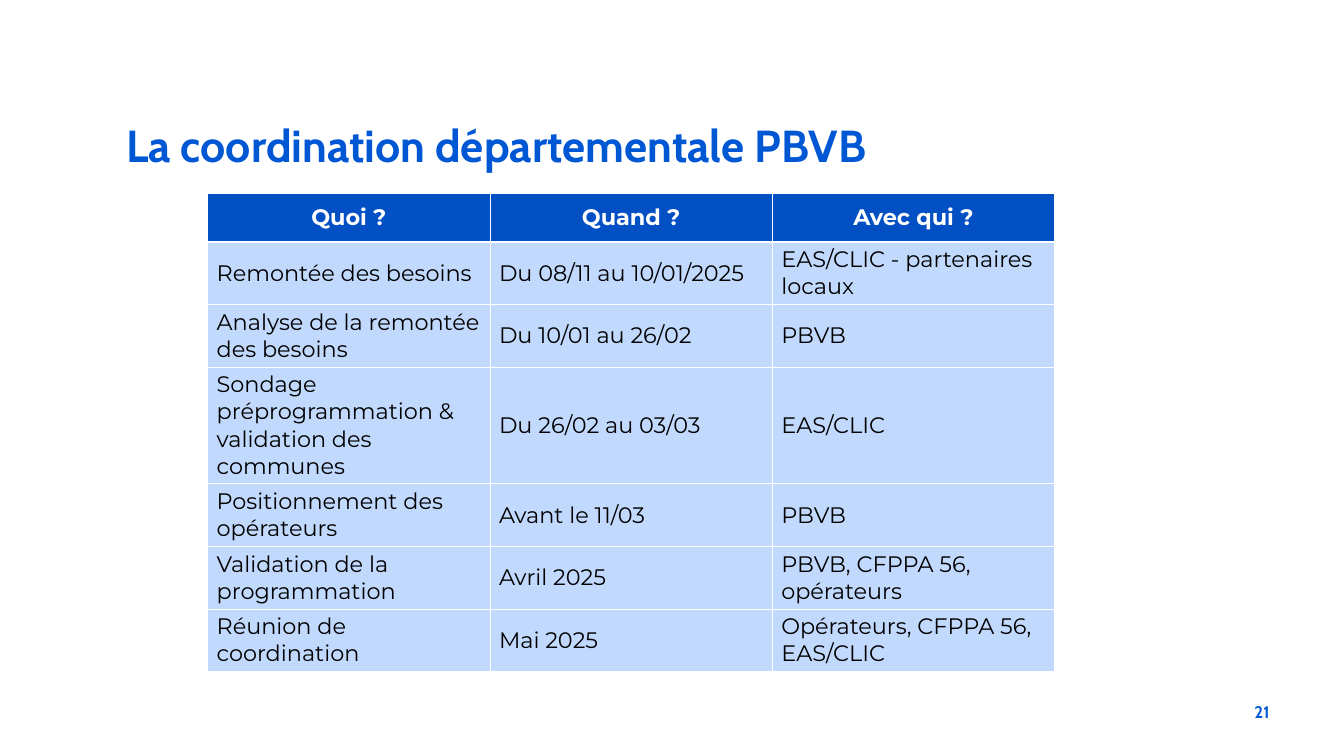
from dataclasses import dataclass

from lxml.etree import SubElement
from pptx import Presentation
from pptx.dml.color import RGBColor
from pptx.enum.text import MSO_ANCHOR, PP_ALIGN
from pptx.oxml.ns import qn
from pptx.table import _Cell
from pptx.text.text import TextFrame
from pptx.util import Inches, Pt

TITLE_BLUE = RGBColor(0x00, 0x57, 0xD4)
HEADER_BLUE = RGBColor(0x03, 0x4F, 0xC4)
BODY_BLUE = RGBColor(0xC2, 0xD9, 0xFE)
WHITE = RGBColor(0xFF, 0xFF, 0xFF)
BLACK = RGBColor(0x00, 0x00, 0x00)

THIN_BORDER = Pt(0.63)
THICK_BORDER = Pt(1.88)


@dataclass(frozen=True)
class TextStyle:
    font: str
    size: float
    color: RGBColor
    bold: bool
    align: PP_ALIGN


@dataclass(frozen=True)
class Step:
    what: str
    when: str
    who: str
    height: float = 0.62


TITLE_STYLE = TextStyle("Cabin", 32, TITLE_BLUE, True, PP_ALIGN.LEFT)
NUMBER_STYLE = TextStyle("Cabin", 12, TITLE_BLUE, True, PP_ALIGN.RIGHT)
HEADER_STYLE = TextStyle("Montserrat", 16, WHITE, True, PP_ALIGN.CENTER)
BODY_STYLE = TextStyle("Montserrat", 16, BLACK, False, PP_ALIGN.LEFT)

STEPS = [
    Step("Quoi ?", "Quand ?", "Avec qui ?", 0.48),
    Step("Remontée des besoins", "Du 08/11 au 10/01/2025", "EAS/CLIC - partenaires locaux"),
    Step("Analyse de la remontée des besoins", "Du 10/01 au 26/02", "PBVB"),
    Step("Sondage préprogrammation & validation des communes", "Du 26/02 au 03/03", "EAS/CLIC", 1.15),
    Step("Positionnement des opérateurs", "Avant le 11/03", "PBVB"),
    Step("Validation de la programmation", "Avril 2025", "PBVB, CFPPA 56, opérateurs"),
    Step("Réunion de coordination", "Mai 2025", "Opérateurs, CFPPA 56, EAS/CLIC"),
]


def write_text(frame: TextFrame, text: str, style: TextStyle) -> None:
    frame.text = text
    frame.word_wrap = True
    para = frame.paragraphs[0]
    para.alignment = style.align
    para.space_before = Pt(0)
    for span in para.runs:
        span.font.name = style.font
        span.font.size = Pt(style.size)
        span.font.bold = style.bold
        span.font.color.rgb = style.color


def add_borders(cell: _Cell, top: int, bottom: int) -> None:
    properties = cell._tc.get_or_add_tcPr()
    widths = {"a:lnL": THIN_BORDER, "a:lnR": THIN_BORDER, "a:lnT": top, "a:lnB": bottom}
    for tag, width in widths.items():
        line = SubElement(properties, qn(tag), w=str(int(width)))
        fill = SubElement(line, qn("a:solidFill"))
        SubElement(fill, qn("a:srgbClr"), val=str(WHITE))


def format_cell(cell: _Cell, text: str, row: int) -> None:
    is_header = row == 0
    write_text(cell.text_frame, text, HEADER_STYLE if is_header else BODY_STYLE)
    cell.vertical_anchor = MSO_ANCHOR.MIDDLE
    cell.margin_left = cell.margin_right = Inches(0.09)
    cell.margin_top = cell.margin_bottom = Inches(0.04)
    add_borders(
        cell,
        THICK_BORDER if row == 1 else THIN_BORDER,
        THICK_BORDER if is_header else THIN_BORDER,
    )
    cell.fill.solid()
    cell.fill.fore_color.rgb = HEADER_BLUE if is_header else BODY_BLUE


def main() -> None:
    deck = Presentation()
    deck.slide_width, deck.slide_height = Inches(13.33), Inches(7.5)
    page = deck.slides.add_slide(deck.slide_layouts[5])

    title = page.shapes.title
    title.left, title.top = Inches(1.15), Inches(1.18)
    title.width, title.height = Inches(9.5), Inches(1.17)
    write_text(title.text_frame, "La coordination départementale PBVB", TITLE_STYLE)
    title.text_frame.vertical_anchor = MSO_ANCHOR.TOP
    title.text_frame.paragraphs[0].line_spacing = 0.9

    total_height = sum(step.height for step in STEPS)
    schedule = page.shapes.add_table(
        len(STEPS), 3, Inches(2.06), Inches(1.92), Inches(8.4), Inches(total_height)
    ).table
    schedule.horz_banding = False
    for column in schedule.columns:
        column.width = Inches(2.8)
    for row, step in enumerate(STEPS):
        schedule.rows[row].height = Inches(step.height)
        for column, text in enumerate((step.what, step.when, step.who)):
            format_cell(schedule.cell(row, column), text, row)

    number_box = page.shapes.add_textbox(Inches(9.69), Inches(6.91), Inches(3), Inches(0.4))
    write_text(number_box.text_frame, "21", NUMBER_STYLE)

    deck.save("out.pptx")


if __name__ == "__main__":
    main()
